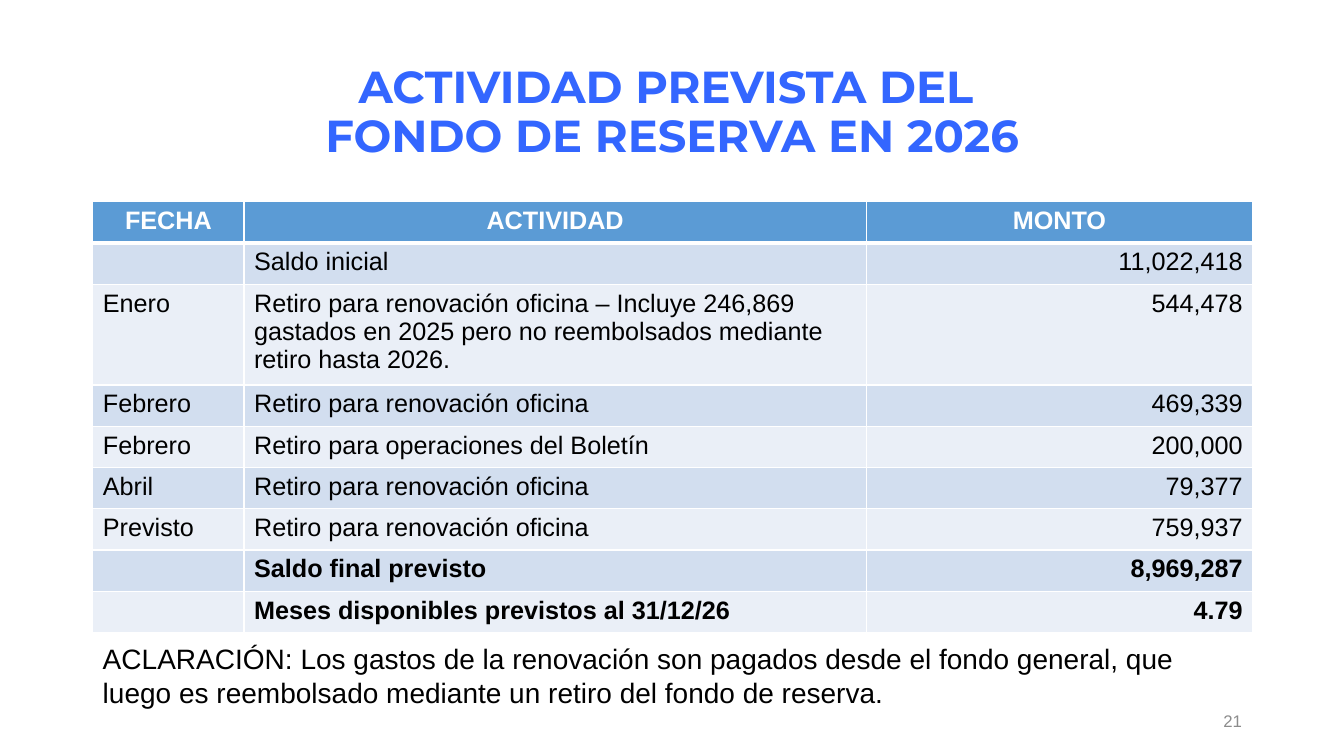
from dataclasses import dataclass

from lxml.etree import SubElement
from pptx import Presentation
from pptx.dml.color import RGBColor
from pptx.enum.text import MSO_ANCHOR as Anchor, PP_ALIGN as Align
from pptx.oxml.ns import qn
from pptx.util import Cm, Pt


@dataclass(frozen=True)
class Theme:
    title_font: str = "Montserrat"
    body_font: str = "Arial"
    title_size: int = 32
    note_size: int = 20
    table_size: int = 18
    number_size: int = 12
    title: str = "3366FF"
    text: str = "000000"
    white: str = "FFFFFF"
    muted: str = "8C8C8C"
    header: str = "5B9BD5"
    bands: tuple = ("D2DEEF", "EAEFF7")


THEME = Theme()
LEFT = Cm(2.34)
WIDTH = Cm(29.21)
COLUMN_WIDTHS = (3.81, 15.68, 9.74)
ROW_HEIGHT = 1.04
TALL_ROW_HEIGHT = 2.4
TALL_ROW = 2
HEADINGS = ("FECHA", "ACTIVIDAD", "MONTO")
RENOVATION = "Retiro para renovación oficina"
MOVEMENTS = (
    ("", "Saldo inicial", "11,022,418"),
    ("Enero", RENOVATION + " – Incluye 246,869 gastados en 2025 pero no "
     "reembolsados mediante retiro hasta 2026.", "544,478"),
    ("Febrero", RENOVATION, "469,339"),
    ("Febrero", "Retiro para operaciones del Boletín", "200,000"),
    ("Abril", RENOVATION, "79,377"),
    ("Previsto", RENOVATION, "759,937"),
)
TOTALS = (
    ("", "Saldo final previsto", "8,969,287"),
    ("", "Meses disponibles previstos al 31/12/26", "4.79"),
)


def add_run(paragraph, text, size, color, font=THEME.body_font, bold=False):
    run = paragraph.add_run()
    run.text = text
    run.font.name = font
    run.font.size = Pt(size)
    run.font.bold = bold
    run.font.color.rgb = RGBColor.from_string(color)


def add_text(slide, box, lines, size, color, align=Align.LEFT,
             anchor=Anchor.TOP, spacing=1.0, **style):
    frame = slide.shapes.add_textbox(*box).text_frame
    frame.word_wrap = True
    frame.vertical_anchor = anchor
    paragraph = frame.paragraphs[0]
    paragraph.alignment = align
    paragraph.line_spacing = spacing
    for index, line in enumerate(lines):
        if index:
            paragraph.add_line_break()
        add_run(paragraph, line, size, color, **style)


def set_borders(cell, top, bottom):
    properties = cell._tc.get_or_add_tcPr()
    for side, points in (("L", 1), ("R", 1), ("T", top), ("B", bottom)):
        line = SubElement(properties, qn(f"a:ln{side}"), w=str(Pt(points)))
        fill = SubElement(line, qn("a:solidFill"))
        SubElement(fill, qn("a:srgbClr"), val=THEME.white)


def fill_cell(cell, text, fill, color, align, bold, top, bottom):
    set_borders(cell, top, bottom)
    cell.fill.solid()
    cell.fill.fore_color.rgb = RGBColor.from_string(fill)
    paragraph = cell.text_frame.paragraphs[0]
    paragraph.alignment = align
    if text:
        add_run(paragraph, text, THEME.table_size, color, bold=bold)


def add_reserve_table(slide):
    rows = (HEADINGS, *MOVEMENTS, *TOTALS)
    heights = [TALL_ROW_HEIGHT if index == TALL_ROW else ROW_HEIGHT
               for index in range(len(rows))]
    table = slide.shapes.add_table(len(rows), len(HEADINGS), LEFT, Cm(5.08),
                                   WIDTH, Cm(sum(heights))).table
    for column, width in zip(table.columns, COLUMN_WIDTHS):
        column.width = Cm(width)
    for index, (values, height) in enumerate(zip(rows, heights)):
        table.rows[index].height = Cm(height)
        heading = index == 0
        fill = THEME.header if heading else THEME.bands[(index - 1) % 2]
        color = THEME.white if heading else THEME.text
        bold = heading or index > len(MOVEMENTS)
        for column, text in enumerate(values):
            align = Align.RIGHT if column == 2 else Align.LEFT
            fill_cell(table.cell(index, column), text, fill, color,
                      Align.CENTER if heading else align, bold,
                      top=3 if index == 1 else 1, bottom=3 if heading else 1)


def main():
    deck = Presentation()
    deck.slide_width, deck.slide_height = Cm(33.87), Cm(19.05)
    slide = deck.slides.add_slide(deck.slide_layouts[6])

    # Title
    add_text(slide, (LEFT, Cm(1.02), WIDTH, Cm(3.68)),
             ("ACTIVIDAD PREVISTA DEL ", "FONDO DE RESERVA EN 2026"),
             THEME.title_size, THEME.title, Align.CENTER, Anchor.MIDDLE,
             spacing=0.9, font=THEME.title_font, bold=True)

    # Reserve fund activity
    add_reserve_table(slide)

    # Page number
    add_text(slide, (Cm(23.93), Cm(17.65), Cm(7.62), Cm(1.02)), ("21",),
             THEME.number_size, THEME.muted, Align.RIGHT, Anchor.MIDDLE)

    # Clarification
    add_text(slide, (LEFT, Cm(16.05), WIDTH, Cm(1.96)),
             ("ACLARACIÓN: Los gastos de la renovación son pagados desde el "
              "fondo general, que luego es reembolsado mediante un retiro "
              "del fondo de reserva.",),
             THEME.note_size, THEME.text)

    deck.save("out.pptx")


if __name__ == "__main__":
    main()
